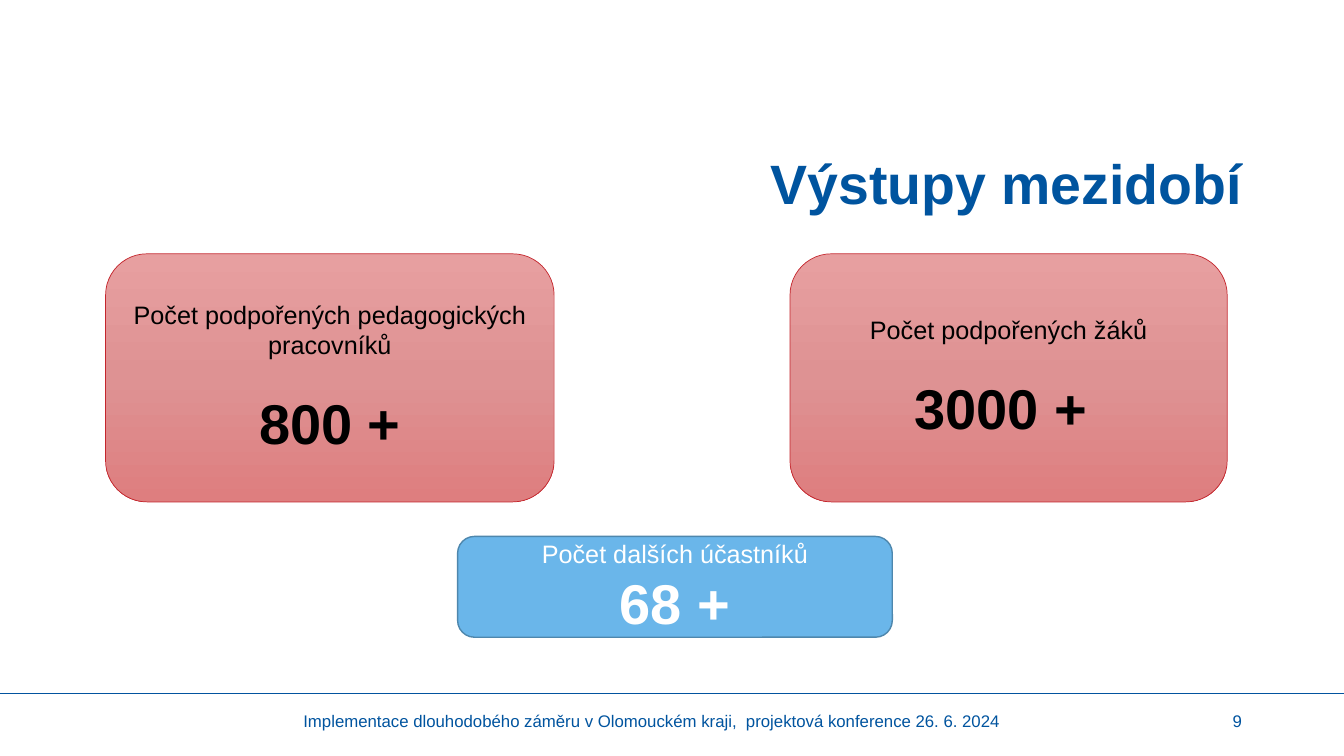
from copy import deepcopy

from pptx import Presentation
from pptx.dml.color import RGBColor
from pptx.enum.shapes import MSO_CONNECTOR, MSO_SHAPE
from pptx.enum.text import MSO_ANCHOR, PP_ALIGN
from pptx.oxml.ns import qn
from pptx.util import Pt

COLORS = {
    "navy": "00549F", "rule": "02539F", "black": "000000", "white": "FFFFFF",
    "red line": "C4262D", "blue": "6AB6EA", "blue line": "4E87AD",
}
RED_GRADIENT = [(0, "E79FA0"), (0.5, "DE9293"), (1, "DE7E7F")]
FONT = "Arial"
WIDTH, HEIGHT = 960, 540
RULE_TOP = 495.4

# text, (left, top, width, height), size, bold, alignment
LABELS = [
    ("Výstupy mezidobí", (248.4, 103, 645.8, 54), 39.6, True, PP_ALIGN.RIGHT),
    ("Implementace dlouhodobého záměru v Olomouckém kraji,  projektová konference 26. 6. 2024",
     (169.2, 500.4, 593.3, 28.8), 12, False, PP_ALIGN.CENTER),
    ("9", (678.2, 500.4, 216, 28.8), 12, False, PP_ALIGN.RIGHT),
]
# caption, count, (left, top, width, height), text colour, line colour, line width, gap
CARDS = [
    ("Počet podpořených pedagogických pracovníků", "800 +",
     (75.4, 181.3, 320.4, 177.2), "black", "red line", 0.5, 20.7),
    ("Počet podpořených žáků", "3000 + ",
     (564.3, 181.3, 312.3, 177.2), "black", "red line", 0.5, 20.7),
    ("Počet dalších účastníků", "68 +",
     (326.9, 383.2, 310.5, 72), "white", "blue line", 1, 0),
]


def rgb(name):
    return RGBColor.from_string(COLORS[name])


def points(values):
    return [Pt(value) for value in values]


def style_paragraph(para, size, bold, color, align):
    para.alignment = align
    for span in para.runs:
        span.font.name = FONT
        span.font.size = Pt(size)
        span.font.bold = bold
        span.font.color.rgb = rgb(color)


def add_label(page, text, place, size, bold, align):
    box = page.shapes.add_textbox(*points(place))
    frame = box.text_frame
    frame.word_wrap = True
    frame.vertical_anchor = MSO_ANCHOR.MIDDLE
    frame.text = text
    style_paragraph(frame.paragraphs[0], size, bold, "navy", align)


def fill_red(fill):
    """Apply the three-stop gradient, running from top to bottom."""
    fill.gradient()
    fill.gradient_angle = 270
    first = fill._xPr.find(".//" + qn("a:gs"))
    first.addnext(deepcopy(first))
    for stop, (position, color) in zip(fill.gradient_stops, RED_GRADIENT):
        stop.position = position
        stop.color.rgb = RGBColor.from_string(color)


def add_card(page, caption, count, place, color, line_color, line_width, gap):
    card = page.shapes.add_shape(MSO_SHAPE.ROUNDED_RECTANGLE, *points(place))
    card.shadow.inherit = False
    if line_color == "red line":
        fill_red(card.fill)
    else:
        card.fill.solid()
        card.fill.fore_color.rgb = rgb("blue")
    card.line.color.rgb = rgb(line_color)
    card.line.width = Pt(line_width)
    frame = card.text_frame
    frame.word_wrap = True
    frame.vertical_anchor = MSO_ANCHOR.MIDDLE
    frame.text = f"{caption}\n{count}"
    caption_para, count_para = frame.paragraphs
    style_paragraph(caption_para, 18, False, color, PP_ALIGN.CENTER)
    style_paragraph(count_para, 40, True, color, PP_ALIGN.CENTER)
    count_para.space_before = Pt(gap)


def add_rule(page):
    rule = page.shapes.add_connector(
        MSO_CONNECTOR.STRAIGHT, *points((0, RULE_TOP, WIDTH, RULE_TOP)))
    rule.line.color.rgb = rgb("rule")
    rule.line.width = Pt(1)
    properties = rule._element.spPr
    properties.append(properties.makeelement(qn("a:effectLst"), {}))


def main():
    deck = Presentation()
    deck.slide_width, deck.slide_height = points((WIDTH, HEIGHT))
    page = deck.slides.add_slide(deck.slide_layouts[6])
    add_rule(page)
    for label in LABELS:
        add_label(page, *label)
    for card in CARDS:
        add_card(page, *card)
    deck.save("out.pptx")


if __name__ == "__main__":
    main()
